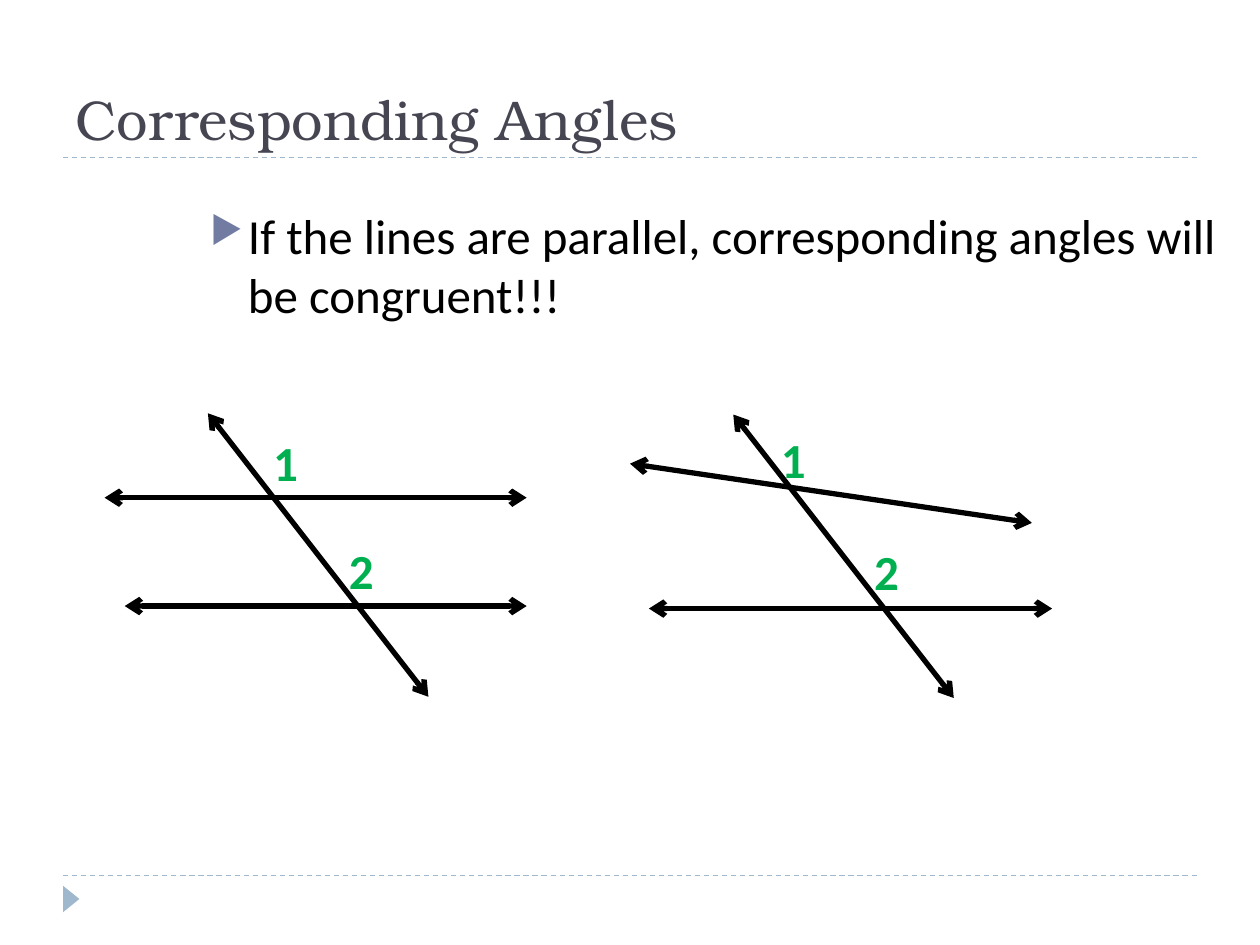
from lxml.etree import SubElement
from pptx import Presentation
from pptx.dml.color import RGBColor
from pptx.enum.dml import MSO_LINE_DASH_STYLE as Dash
from pptx.enum.shapes import MSO_CONNECTOR as Connector, MSO_SHAPE as Shape
from pptx.enum.text import MSO_ANCHOR as Anchor, MSO_AUTO_SIZE as AutoSize
from pptx.oxml.ns import qn
from pptx.util import Inches, Pt

PALE_BLUE = RGBColor(0x9F, 0xB8, 0xCD)
SLATE = RGBColor(0x46, 0x46, 0x53)
BULLET_BLUE = RGBColor(0x72, 0x7C, 0xA3)
BLACK = RGBColor(0, 0, 0)
GREEN = RGBColor(0, 0xB0, 0x50)

RULE_HEIGHTS = (6.95, 1.25)
PARALLEL_LINES = [
    (0.83, 3.95, 4.18, 3.95),
    (3.4, 5.53, 1.65, 3.28),
    (0.99, 4.81, 4.18, 4.81),
]
CROOKED_LINES = [
    (5, 3.68, 8.19, 4.15),
    (7.57, 5.54, 5.82, 3.29),
    (5.15, 4.83, 8.35, 4.83),
]
DIAGRAMS = [
    (PARALLEL_LINES, [(2.07, 3.38), (2.67, 4.24)]),
    (CROOKED_LINES, [(6.1, 3.36), (6.84, 4.25)]),
]


def add_line(slide, ends, color, width):
    line = slide.shapes.add_connector(Connector.STRAIGHT, *map(Inches, ends))
    line.line.color.rgb = color
    line.line.width = Pt(width)
    SubElement(line._element.spPr, qn("a:effectLst"))
    return line


def add_rule(slide, height):
    rule = add_line(slide, (0.5, height, 9.5, height), PALE_BLUE, 0.75)
    rule.line.dash_style = Dash.DASH


def add_geometry_line(slide, ends):
    line = add_line(slide, ends, BLACK, 3)
    outline = line.line._get_or_add_ln()
    for end in ("a:headEnd", "a:tailEnd"):
        SubElement(outline, qn(end), type="arrow")


def add_corner_marker(slide):
    marker = slide.shapes.add_shape(
        Shape.ISOSCELES_TRIANGLE, *map(Inches, (0.46, 7.07, 0.21, 0.13)))
    marker.rotation = 90
    marker.shadow.inherit = False
    marker.fill.solid()
    marker.fill.fore_color.rgb = PALE_BLUE
    marker.line.fill.background()


def add_text(slide, place, words, size, font, color, bold=False):
    frame = slide.shapes.add_textbox(*map(Inches, place)).text_frame
    frame.word_wrap = True
    run = frame.paragraphs[0].add_run()
    run.text = words
    run.font.size = Pt(size)
    run.font.name = font
    run.font.color.rgb = color
    run.font.bold = bold
    return frame


def add_bullet(paragraph):
    paragraph.space_before = Pt(6)
    properties = paragraph._p.get_or_add_pPr()
    properties.set("marL", str(Inches(0.3)))
    properties.set("indent", str(Inches(-0.3)))
    bullet_color = SubElement(properties, qn("a:buClr"))
    SubElement(bullet_color, qn("a:srgbClr"), val=str(BULLET_BLUE))
    SubElement(properties, qn("a:buSzPct"), val="76000")
    SubElement(properties, qn("a:buChar"), char="▶")


def add_diagram(slide, lines, angle_places):
    for ends in lines:
        add_geometry_line(slide, ends)
    for number, (left, top) in enumerate(angle_places, 1):
        label = add_text(slide, (left, top, 0.66, 0.57), str(number),
                         28, "Calibri", GREEN, bold=True)
        label.auto_size = AutoSize.SHAPE_TO_FIT_TEXT


def main():
    deck = Presentation()
    deck.slide_width, deck.slide_height = Inches(10), Inches(7.5)
    slide = deck.slides.add_slide(deck.slide_layouts[6])
    for height in RULE_HEIGHTS:
        add_rule(slide, height)
    add_corner_marker(slide)
    title = add_text(slide, (0.5, 0.17, 9, 1.08), "Corresponding Angles",
                     32, "TeX Gyre Bonum", SLATE)
    title.vertical_anchor = Anchor.BOTTOM
    statement = add_text(
        slide, (1.57, 1.58, 8.2, 5.67),
        "If the lines are parallel, corresponding angles will be congruent!!!",
        28, "Calibri", BLACK)
    add_bullet(statement.paragraphs[0])
    for lines, angle_places in DIAGRAMS:
        add_diagram(slide, lines, angle_places)
    deck.save("out.pptx")


if __name__ == "__main__":
    main()
